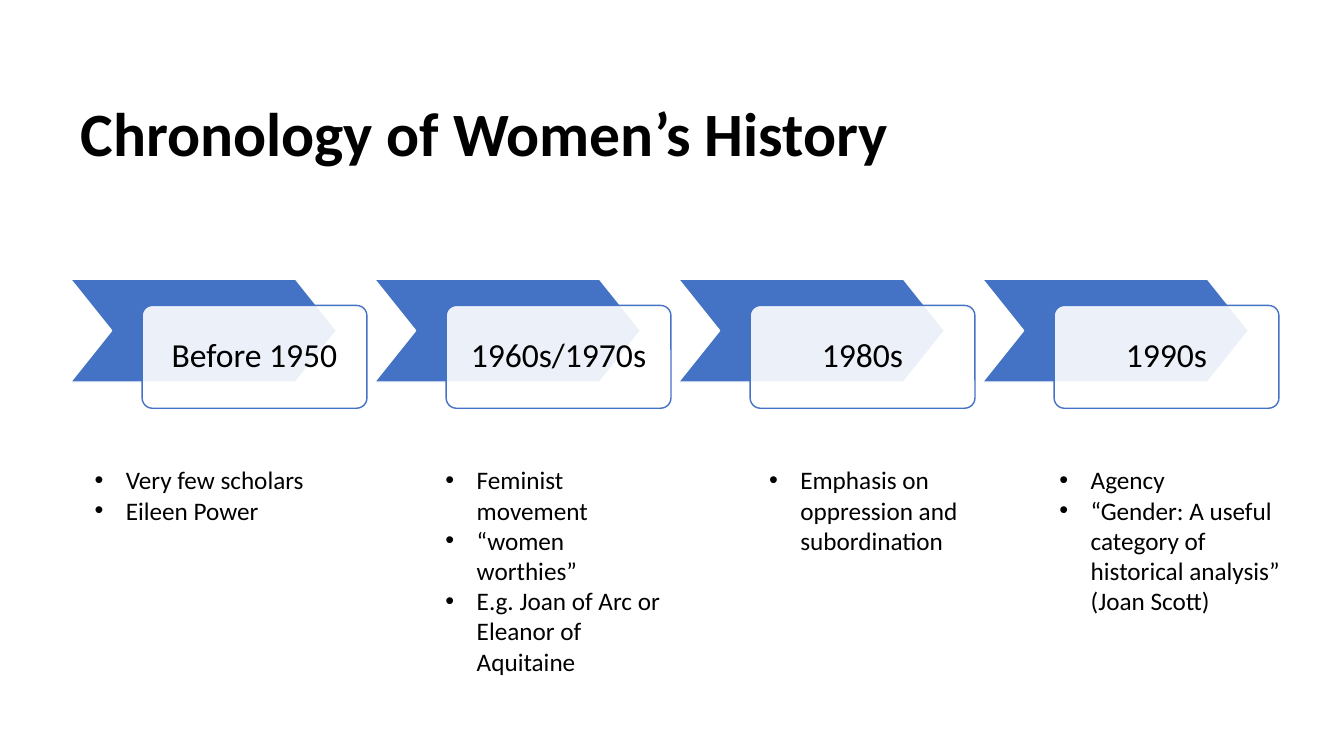
from dataclasses import dataclass

from lxml import etree
from pptx import Presentation
from pptx.dml.color import RGBColor
from pptx.enum import shapes, text
from pptx.oxml import ns
from pptx.shapes.autoshape import Shape
from pptx.slide import Slide
from pptx.text.text import _Paragraph as Paragraph
from pptx.util import Inches, Pt

BLACK = RGBColor(0x00, 0x00, 0x00)
WHITE = RGBColor(0xFF, 0xFF, 0xFF)
BLUE = RGBColor(0x44, 0x72, 0xC4)

FONT = "Calibri"
FIRST_LEFT = 0.7
STEP = 3.015
CARD_OFFSET = 0.71
BULLET_INDENT = 0.31


@dataclass(frozen=True)
class Period:
    """A marker label and the bullet list below it, with the list's box."""
    label: str
    bullets: tuple[str, ...]
    left: float
    width: float
    height: float
    wraps: bool = True


PERIODS = (
    Period("Before 1950", ("Very few scholars", "Eileen Power"),
           0.84, 2.3, 0.71, wraps=False),
    Period("1960s/1970s",
           ("Feminist movement", "“women worthies”",
            "E.g. Joan of Arc or Eleanor of Aquitaine"),
           4.32, 2.39, 2.22),
    Period("1980s", ("Emphasis on oppression and subordination",),
           7.53, 2.16, 1.01),
    Period("1990s",
           ("Agency",
            "“Gender: A useful category of historical analysis” (Joan Scott)"),
           10.41, 2.4, 1.62),
)


def format_runs(paragraph: Paragraph, size: float, bold: bool = False) -> None:
    for run in paragraph.runs:
        run.font.name = FONT
        run.font.size = Pt(size)
        run.font.bold = bold
        run.font.color.rgb = BLACK


def add_bullet(paragraph: Paragraph) -> None:
    properties = paragraph._p.get_or_add_pPr()
    properties.set("marL", str(Inches(BULLET_INDENT)))
    properties.set("indent", str(-Inches(BULLET_INDENT)))
    font = etree.SubElement(properties, ns.qn("a:buFont"))
    font.set("typeface", "Arial")
    bullet = etree.SubElement(properties, ns.qn("a:buChar"))
    bullet.set("char", "•")


def set_opacity(shape: Shape, percent: int) -> None:
    color = shape._element.spPr.find(f"{ns.qn('a:solidFill')}/{ns.qn('a:srgbClr')}")
    alpha = etree.SubElement(color, ns.qn("a:alpha"))
    alpha.set("val", str(percent * 1000))


def add_panel(slide: Slide, kind: shapes.MSO_SHAPE, left: float, top: float,
              width: float, adjustment: float, fill: RGBColor,
              line: RGBColor) -> Shape:
    shape = slide.shapes.add_shape(
        kind, Inches(left), Inches(top), Inches(width), Inches(1.02))
    shape.adjustments[0] = adjustment
    shape.shadow.inherit = False
    shape.fill.solid()
    shape.fill.fore_color.rgb = fill
    shape.line.color.rgb = line
    shape.line.width = Pt(1)
    return shape


def add_period_marker(slide: Slide, period: Period, left: float) -> None:
    """Draw the chevron and the translucent label card that overlaps it."""
    add_panel(slide, shapes.MSO_SHAPE.CHEVRON, left, 2.77, 2.64, 0.4, BLUE, WHITE)
    card = add_panel(slide, shapes.MSO_SHAPE.ROUNDED_RECTANGLE,
                     left + CARD_OFFSET, 3.03, 2.23, 0.1, WHITE, BLUE)
    set_opacity(card, 90)
    frame = card.text_frame
    frame.text = period.label
    frame.word_wrap = True
    frame.vertical_anchor = text.MSO_ANCHOR.MIDDLE
    frame.margin_left = frame.margin_right = Inches(0.19)
    frame.margin_top = frame.margin_bottom = Inches(0.19)
    paragraph = frame.paragraphs[0]
    paragraph.alignment = text.PP_ALIGN.CENTER
    paragraph.line_spacing = 0.9
    format_runs(paragraph, 24)


def add_bullet_list(slide: Slide, period: Period) -> None:
    box = slide.shapes.add_textbox(
        Inches(period.left), Inches(4.56),
        Inches(period.width), Inches(period.height))
    frame = box.text_frame
    frame.text = "\n".join(period.bullets)
    frame.word_wrap = period.wraps
    frame.auto_size = text.MSO_AUTO_SIZE.SHAPE_TO_FIT_TEXT
    for paragraph in frame.paragraphs:
        add_bullet(paragraph)
        format_runs(paragraph, 18)


def add_title(slide: Slide) -> None:
    box = slide.shapes.add_textbox(
        Inches(FIRST_LEFT), Inches(0.89), Inches(8.29), Inches(0.84))
    frame = box.text_frame
    frame.text = "Chronology of Women’s History"
    frame.word_wrap = False
    frame.auto_size = text.MSO_AUTO_SIZE.SHAPE_TO_FIT_TEXT
    format_runs(frame.paragraphs[0], 44, bold=True)


def main() -> None:
    presentation = Presentation()
    presentation.slide_width = Inches(13.33)
    presentation.slide_height = Inches(7.5)
    slide = presentation.slides.add_slide(presentation.slide_layouts[6])
    add_title(slide)
    for index, period in enumerate(PERIODS):
        add_period_marker(slide, period, FIRST_LEFT + index * STEP)
    for period in PERIODS:
        add_bullet_list(slide, period)
    presentation.save("out.pptx")


if __name__ == "__main__":
    main()
